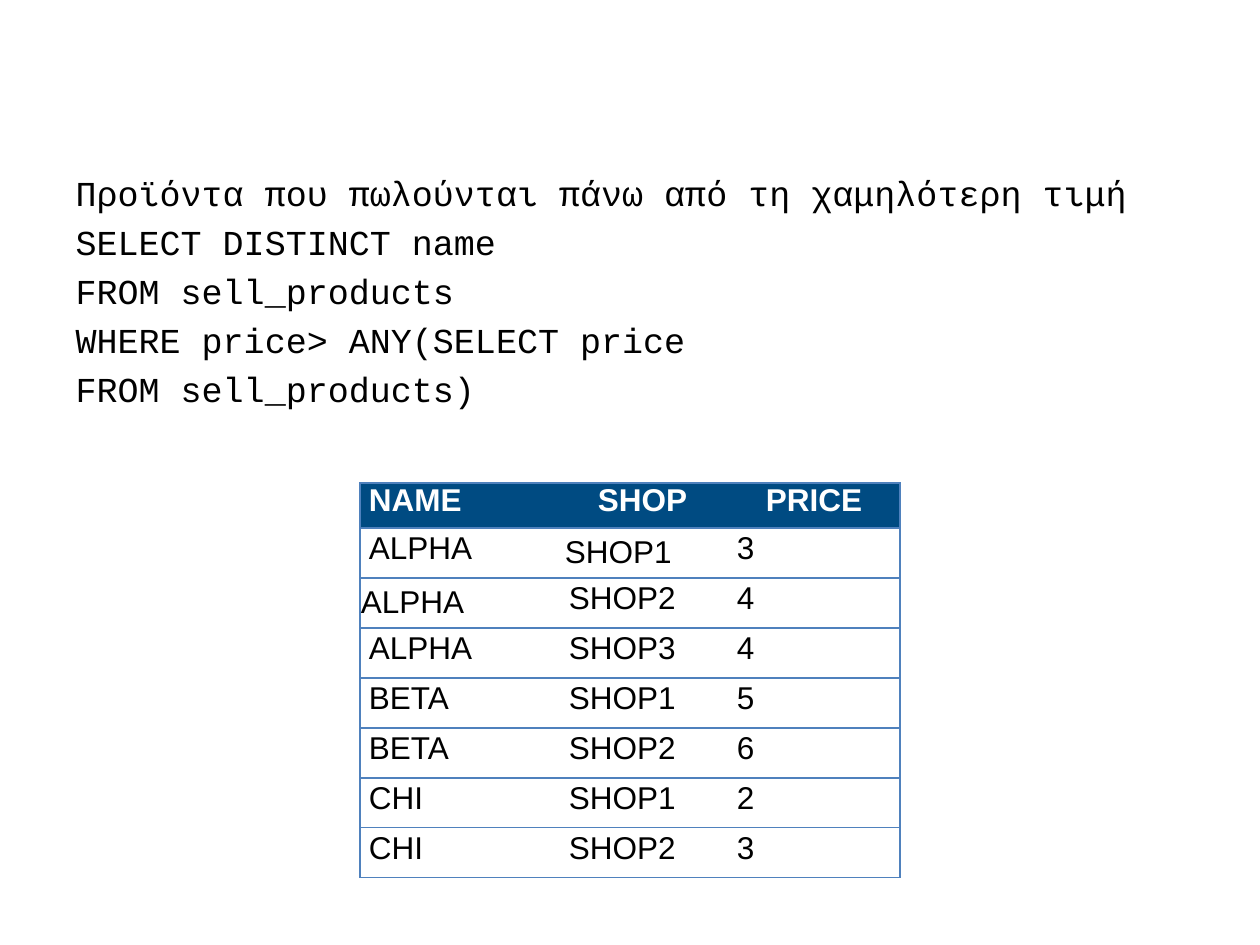
from dataclasses import dataclass

from pptx import Presentation
from pptx.dml import color
from pptx.enum import text
from pptx.oxml import ns, xmlchemy
from pptx.util import Emu, Pt

PX = 914400 / 126
NAVY, BLUE, WHITE, BLACK = "004B82", "4F81BD", "FFFFFF", "000000"
QUERY = [
    "Προϊόντα που πωλούνται πάνω από τη χαμηλότερη τιμή",
    "SELECT DISTINCT name",
    "FROM sell_products",
    "WHERE price> ANY(SELECT price",
    "FROM sell_products)",
]
SALES = [
    ("ALPHA", "SHOP1", "3"),
    ("ALPHA", "SHOP2", "4"),
    ("ALPHA", "SHOP3", "4"),
    ("BETA", "SHOP1", "5"),
    ("BETA", "SHOP2", "6"),
    ("CHI", "SHOP1", "2"),
    ("CHI", "SHOP2", "3"),
]
FLUSH = {(1, 1), (2, 0)}


@dataclass(frozen=True)
class Column:
    head: str
    width: int
    head_pad: int
    pad: int


COLUMNS = [
    Column("NAME", 204, 8, 8),
    Column("SHOP", 168, 33, 4),
    Column("PRICE", 168, 33, 4),
]


def px(n: int) -> Emu:
    return Emu(round(n * PX))


def rgb(code: str) -> color.RGBColor:
    return color.RGBColor.from_string(code)


def style(para, face: str, size: int, ink: str, bold: bool = False) -> None:
    for run in para.runs:
        font = run.font
        font.name, font.size, font.bold = face, Pt(size), bold
        font.color.rgb = rgb(ink)


def add_query(slide) -> None:
    title, body = slide.shapes.title, slide.placeholders[1]
    title.element.getparent().remove(title.element)
    body.left, body.top, body.width, body.height = map(px, (63, 165, 1134, 287))
    frame = body.text_frame
    frame.text = "\n".join(QUERY)
    frame.word_wrap = True
    frame.auto_size = text.MSO_AUTO_SIZE.NONE
    for para in frame.paragraphs:
        props = para._p.get_or_add_pPr()
        props.set("marL", "0")
        props.set("indent", "0")
        props.append(xmlchemy.OxmlElement("a:buNone"))
        style(para, "Courier New", 20, BLACK)


def add_edges(cell, shown: str) -> None:
    props = cell._tc.get_or_add_tcPr()
    for side in "LRTB":
        line = xmlchemy.OxmlElement(f"a:ln{side}")
        line.set("w", str(Pt(1)))
        if side in shown:
            fill = xmlchemy.OxmlElement("a:solidFill")
            tone = xmlchemy.OxmlElement("a:srgbClr")
            tone.set("val", BLUE)
            fill.append(tone)
        else:
            fill = xmlchemy.OxmlElement("a:noFill")
        line.append(fill)
        props.append(line)


def fill_cell(cell, word: str, row: int, col: int) -> None:
    head = row == 0
    cell.margin_left = cell.margin_right = px(1)
    cell.margin_top = cell.margin_bottom = 0
    cell.vertical_anchor = text.MSO_ANCHOR.MIDDLE
    add_edges(cell, "TB" + {0: "L", len(COLUMNS) - 1: "R"}.get(col, ""))
    cell.fill.solid()
    cell.fill.fore_color.rgb = rgb(NAVY if head else WHITE)
    cell.text_frame.text = word
    para = cell.text_frame.paragraphs[0]
    if (row, col) not in FLUSH:
        pad = COLUMNS[col].head_pad if head else COLUMNS[col].pad
        para._p.get_or_add_pPr().set("marL", str(px(pad)))
        para.line_spacing = Pt(14.5 if head else 15)
    style(para, "Arial", 18, WHITE if head else BLACK, head)


def add_sales(slide) -> None:
    rows = [tuple(c.head for c in COLUMNS), *SALES]
    highs = [45] + [50] * len(SALES)
    wide = sum(c.width for c in COLUMNS)
    grid = slide.shapes.add_table(
        len(rows), len(COLUMNS), px(360), px(483), px(wide), px(sum(highs))
    ).table
    grid.horz_banding = False
    for col, spec_col in zip(grid.columns, COLUMNS):
        col.width = px(spec_col.width)
    for row, high in zip(grid.rows, highs):
        row.height = px(high)
    for r, words in enumerate(rows):
        for c, word in enumerate(words):
            fill_cell(grid.cell(r, c), word, r, c)


def main() -> None:
    deck = Presentation()
    deck.slide_width, deck.slide_height = px(1260), px(945)
    slide = deck.slides.add_slide(deck.slide_layouts[1])
    add_query(slide)
    add_sales(slide)
    deck.save("out.pptx")


if __name__ == "__main__":
    main()
